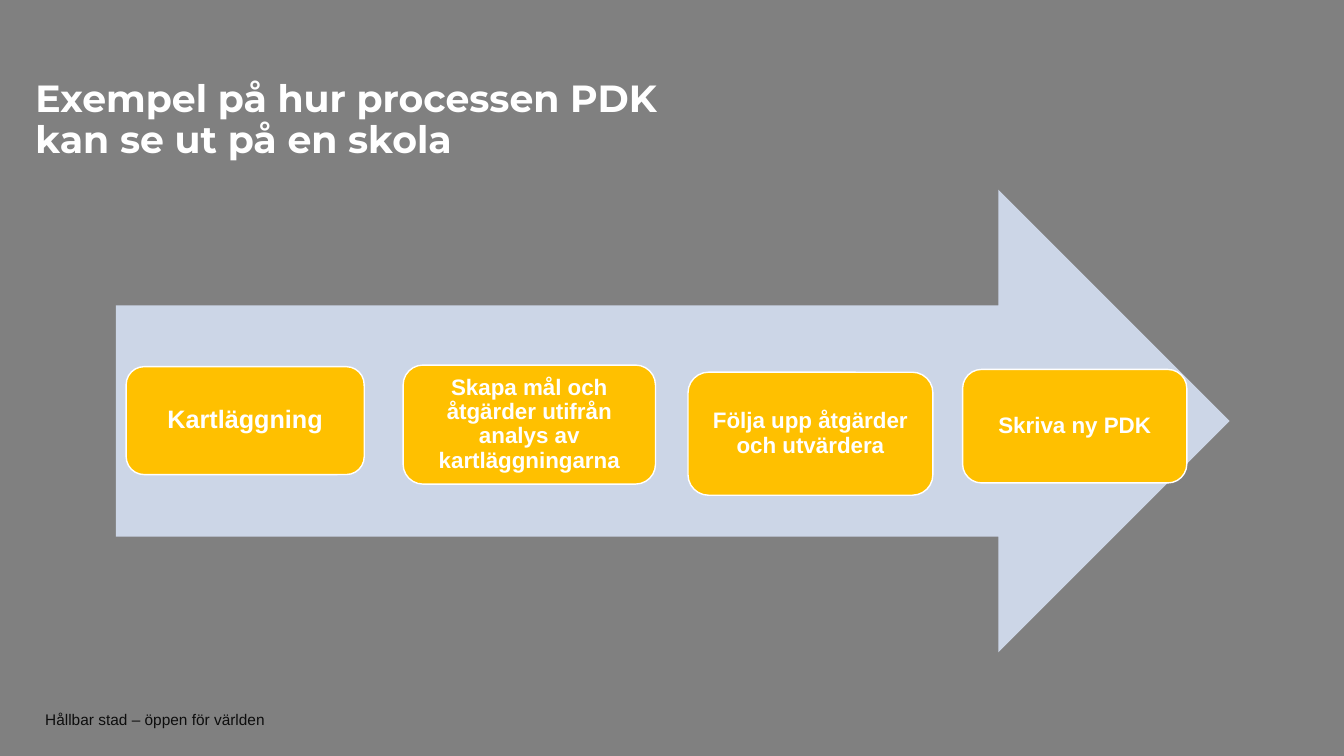
from dataclasses import dataclass

import pptx
import pptx.dml.color
import pptx.enum.shapes
import pptx.enum.text
import pptx.util

Cm = pptx.util.Cm
Pt = pptx.util.Pt
Color = pptx.dml.color.RGBColor.from_string
ShapeType = pptx.enum.shapes.MSO_SHAPE
Align = pptx.enum.text.PP_ALIGN

TITLE = "Exempel på hur processen PDK \vkan se ut på en skola"
TITLE_BOX = (0.89, 2.01, 28.35, 2.06)
FOOTER = "Hållbar stad – öppen för världen"
FOOTER_BOX = (1.14, 17.93, 24, 0.41)
ARROW_BOX = (2.92, 4.78, 28.07, 11.66)
STEPS = [
    ("Kartläggning", 18, (3.18, 9.24, 6, 2.72)),
    ("Skapa mål och åtgärder utifrån analys av kartläggningarna", 16, (10.16, 9.2, 6.36, 3)),
    ("Följa upp åtgärder och utvärdera", 16, (17.34, 9.38, 6.17, 3.1)),
    ("Skriva ny PDK", 16, (24.26, 9.31, 5.65, 2.86)),
]


@dataclass(frozen=True)
class Theme:
    background: str = "808080"
    arrow: str = "CCD6E7"
    step: str = "FFC000"
    light: str = "FFFFFF"
    dark: str = "0D0D0D"
    heading_font: str = "Montserrat"
    body_font: str = "Arial"
    title_size: int = 27
    footer_size: int = 11


THEME = Theme()


def write(shape, text, font_name, size, color, bold, align, margins, spacing):
    frame = shape.text_frame
    frame.text = text
    frame.word_wrap = True
    frame.auto_size = pptx.enum.text.MSO_AUTO_SIZE.NONE
    frame.vertical_anchor = pptx.enum.text.MSO_ANCHOR.MIDDLE
    frame.margin_left = frame.margin_right = Cm(margins[0])
    frame.margin_top = frame.margin_bottom = Cm(margins[1])
    paragraph = frame.paragraphs[0]
    paragraph.alignment = align
    paragraph.line_spacing = spacing
    paragraph.space_before = Pt(0)
    paragraph.font.name = font_name
    paragraph.font.size = Pt(size)
    paragraph.font.bold = bold
    paragraph.font.color.rgb = Color(color)


def add_filled(slide, kind, box, fill):
    shape = slide.shapes.add_shape(kind, *map(Cm, box))
    shape.shadow.inherit = False
    shape.fill.solid()
    shape.fill.fore_color.rgb = Color(fill)
    shape.line.fill.background()
    return shape


def main():
    presentation = pptx.Presentation()
    presentation.slide_width = Cm(33.87)
    presentation.slide_height = Cm(19.05)
    slide = presentation.slides.add_slide(presentation.slide_layouts.get_by_name("Title Only"))
    slide.background.fill.solid()
    slide.background.fill.fore_color.rgb = Color(THEME.background)

    title = slide.shapes.title
    title.left, title.top, title.width, title.height = map(Cm, TITLE_BOX)
    write(title, TITLE, THEME.heading_font, THEME.title_size, THEME.light,
          True, Align.LEFT, (0, 0.13), 0.9)

    footer = slide.shapes.add_textbox(*map(Cm, FOOTER_BOX))
    write(footer, FOOTER, THEME.body_font, THEME.footer_size, THEME.dark,
          False, Align.LEFT, (0, 0), 1.0)

    add_filled(slide, ShapeType.RIGHT_ARROW, ARROW_BOX, THEME.arrow)
    for text, size, box in STEPS:
        step = add_filled(slide, ShapeType.ROUNDED_RECTANGLE, box, THEME.step)
        step.line.color.rgb = Color(THEME.light)
        step.line.width = Pt(1)
        write(step, text, THEME.body_font, size, THEME.light,
              True, Align.CENTER, (0.33, 0.33), 0.9)

    presentation.save("out.pptx")


if __name__ == "__main__":
    main()
